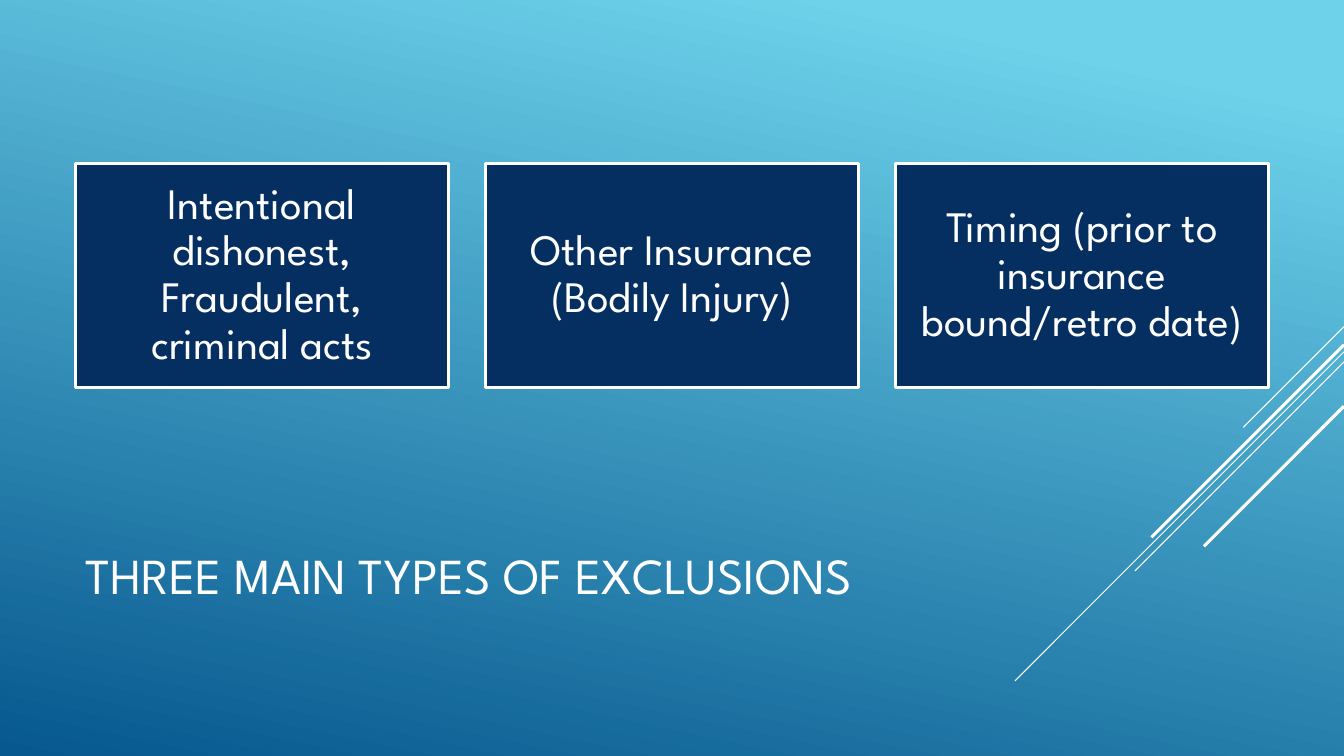
"""Build a slide that names three main types of insurance exclusions."""
import dataclasses

import lxml.etree
import pptx
import pptx.dml.color
import pptx.enum.shapes
import pptx.enum.text
import pptx.oxml.ns
import pptx.presentation
import pptx.shapes.base
import pptx.slide
import pptx.util

Pt = pptx.util.Pt
FONT = "League Spartan"
COLORS = {"sky": "6ED2EB", "ocean": "06588E", "navy": "052F61", "white": "FFFFFF"}
PAGE_WIDTH, PAGE_HEIGHT = 960, 540
MARGIN_LEFT = 54
CARD_TOP, CARD_WIDTH, CARD_HEIGHT, CARD_GAP = 116.7, 266.4, 159.9, 26.4
CARD_INSET = 9.4


@dataclasses.dataclass(frozen=True)
class Ray:
    top: float
    reach: float
    weight: float


RAYS = (
    Ray(233.3, 72, 0.75),
    Ray(251.3, 235, 0.75),
    Ray(258.5, 149.3, 0.75),
    Ray(246.3, 137.5, 2.25),
    Ray(290.2, 100, 2.25),
)
EXCLUSIONS = (
    "Intentional dishonest, Fraudulent, criminal acts",
    "Other Insurance (Bodily Injury)",
    "Timing (prior to insurance bound/retro date)",
)


def color(name: str) -> pptx.dml.color.RGBColor:
    return pptx.dml.color.RGBColor.from_string(COLORS[name])


def paint_background(page: pptx.slide.Slide) -> None:
    fill = page.background.fill
    fill.gradient()
    fill.gradient_angle = 258
    for stop, name, position in zip(fill.gradient_stops, ("sky", "ocean"), (0.1, 1)):
        stop.color.rgb = color(name)
        stop.position = position


def write_text(box: pptx.shapes.base.BaseShape, text: str, *, size: float,
               align: pptx.enum.text.PP_ALIGN, inset: float | None = None) -> None:
    frame = box.text_frame
    frame.word_wrap = True
    frame.vertical_anchor = pptx.enum.text.MSO_ANCHOR.MIDDLE
    if inset is not None:
        frame.margin_left = frame.margin_right = Pt(inset)
        frame.margin_top = frame.margin_bottom = Pt(inset)
    para = frame.paragraphs[0]
    para.alignment = align
    para.line_spacing = 0.9
    span = para.add_run()
    span.text = text
    span.font.name = FONT
    span.font.size = Pt(size)
    span.font.color.rgb = color("white")


def draw_ray(page: pptx.slide.Slide, ray: Ray) -> None:
    line = page.shapes.add_connector(
        pptx.enum.shapes.MSO_CONNECTOR.STRAIGHT,
        Pt(PAGE_WIDTH), Pt(ray.top), Pt(PAGE_WIDTH - ray.reach), Pt(ray.top + ray.reach))
    line.line.color.rgb = color("white")
    line.line.width = Pt(ray.weight)
    lxml.etree.SubElement(line.element.spPr, pptx.oxml.ns.qn("a:effectLst"))


def draw_card(page: pptx.slide.Slide, index: int, text: str) -> None:
    left = MARGIN_LEFT + index * (CARD_WIDTH + CARD_GAP)
    card = page.shapes.add_shape(
        pptx.enum.shapes.MSO_SHAPE.RECTANGLE,
        Pt(left), Pt(CARD_TOP), Pt(CARD_WIDTH), Pt(CARD_HEIGHT))
    card.shadow.inherit = False
    card.fill.solid()
    card.fill.fore_color.rgb = color("navy")
    card.line.color.rgb = color("white")
    card.line.width = Pt(2.25)
    write_text(card, text, size=31, align=pptx.enum.text.PP_ALIGN.CENTER, inset=CARD_INSET)


def main() -> None:
    deck: pptx.presentation.Presentation = pptx.Presentation()
    deck.slide_width, deck.slide_height = Pt(PAGE_WIDTH), Pt(PAGE_HEIGHT)
    page = deck.slides.add_slide(deck.slide_layouts[6])
    paint_background(page)
    for ray in RAYS:
        draw_ray(page, ray)
    title = page.shapes.add_textbox(Pt(MARGIN_LEFT), Pt(353.5), Pt(672), Pt(118.8))
    write_text(title, "THREE MAIN TYPES OF EXCLUSIONS", size=36,
               align=pptx.enum.text.PP_ALIGN.LEFT)
    for index, text in enumerate(EXCLUSIONS):
        draw_card(page, index, text)
    deck.save("out.pptx")


if __name__ == "__main__":
    main()
